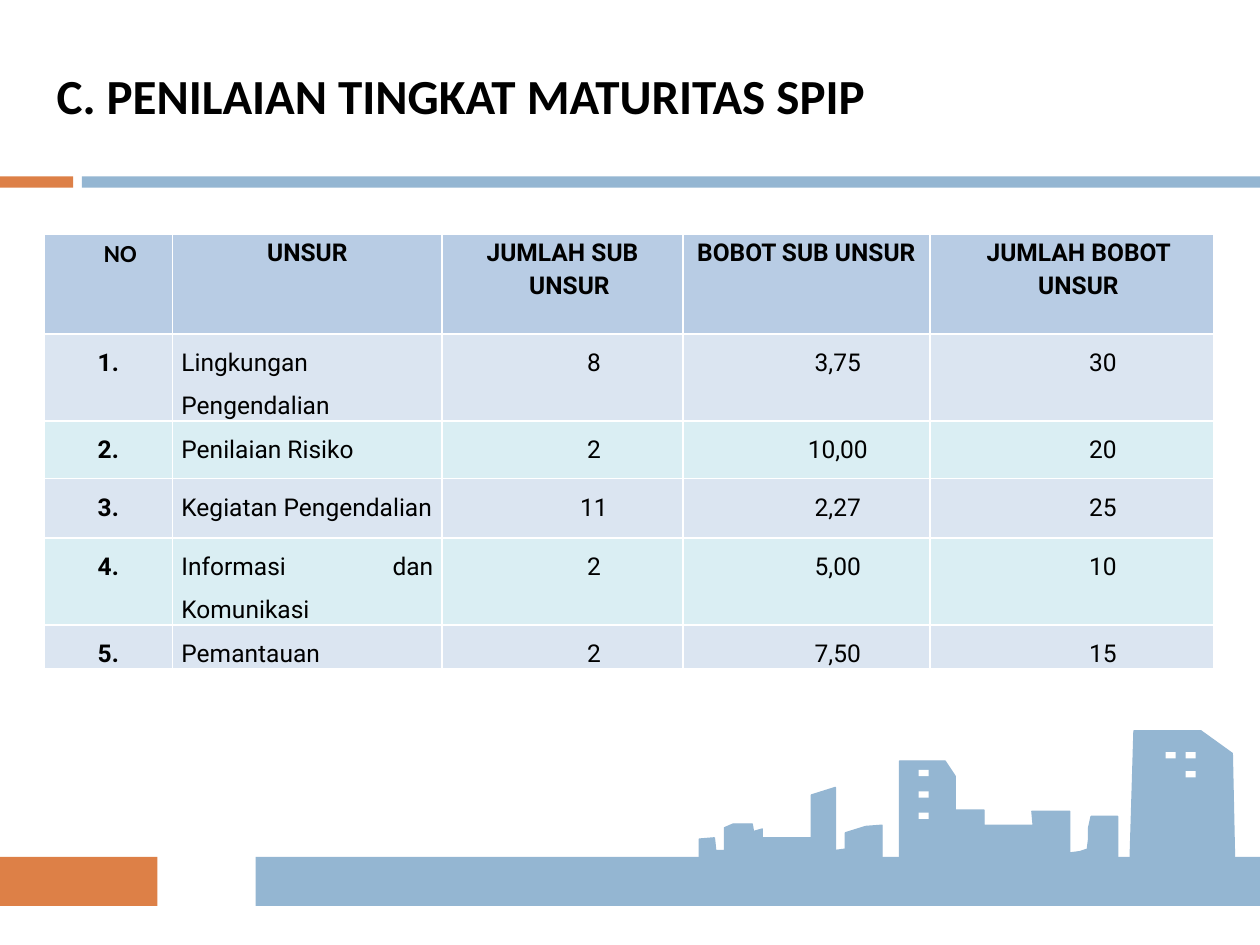
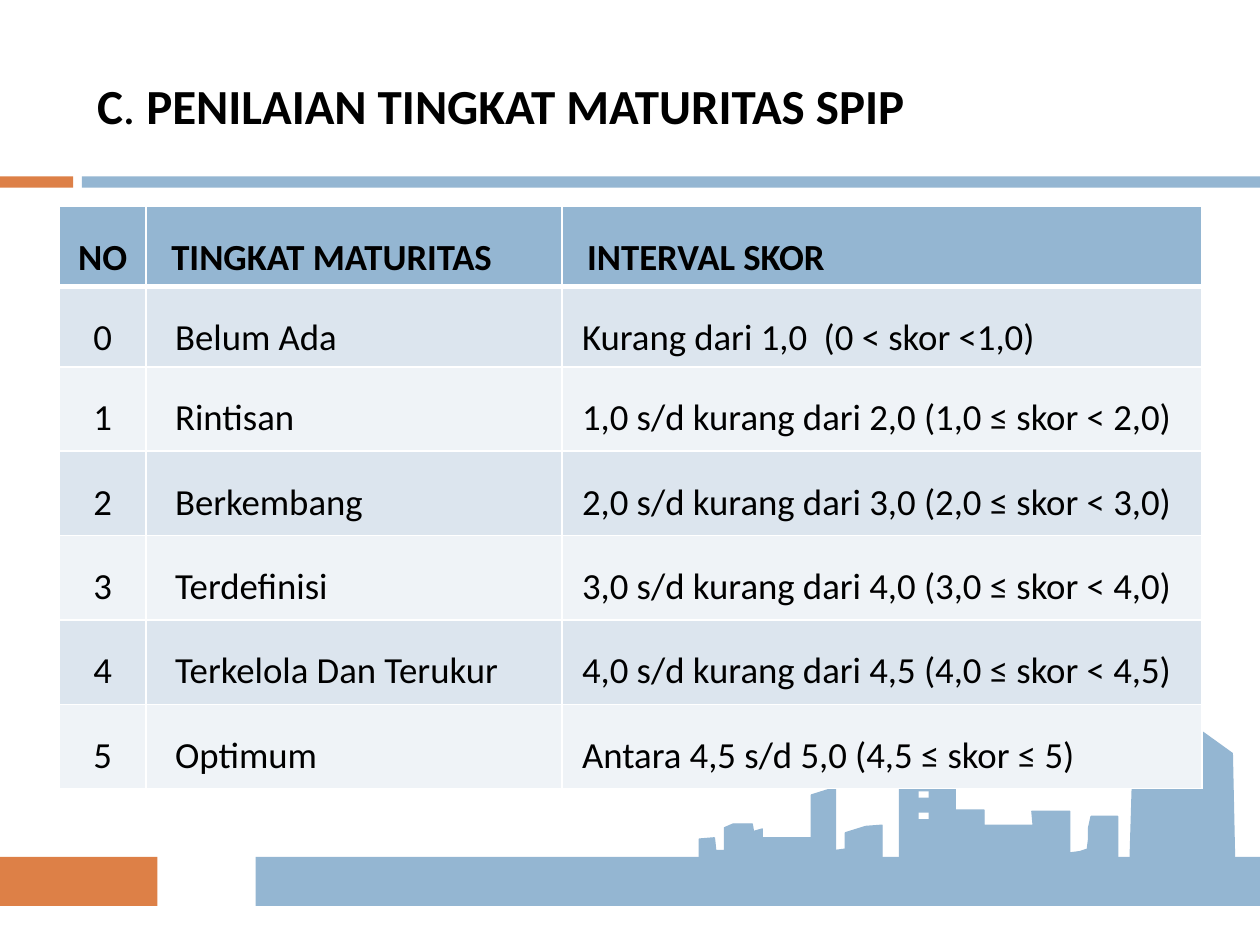
from dataclasses import dataclass

import lxml.etree
import pptx
import pptx.dml.color
import pptx.enum.shapes
import pptx.enum.text
import pptx.oxml.ns
import pptx.util

RGB = pptx.dml.color.RGBColor
ALIGN = pptx.enum.text.PP_ALIGN
RECT = pptx.enum.shapes.MSO_SHAPE.RECTANGLE
qn = pptx.oxml.ns.qn

PX_PER_INCH = 100
EMU_PER_PX = 914400 // PX_PER_INCH

BLACK = RGB(0x00, 0x00, 0x00)
WHITE = RGB(0xFF, 0xFF, 0xFF)
ORANGE = RGB(0xDD, 0x80, 0x47)
BLUE = RGB(0x94, 0xB6, 0xD2)
HEADER_BLUE = RGB(0xB8, 0xCC, 0xE4)
BAND_BLUE = RGB(0xDB, 0xE5, 0xF1)
BAND_AQUA = RGB(0xDA, 0xEE, 0xF3)
BAND_GREY = RGB(0xDC, 0xE5, 0xEE)
BAND_PALE = RGB(0xEF, 0xF3, 0xF7)


@dataclass(frozen=True)
class Box:
    left: int
    top: int
    width: int
    height: int


@dataclass(frozen=True)
class Bar:
    box: Box
    color: RGB


@dataclass(frozen=True)
class CellStyle:
    align: ALIGN = ALIGN.CENTER
    margin: int = 0
    indent: int = 0
    font: str = "Calibri"
    bold: bool = False


@dataclass(frozen=True)
class TableSpec:
    left: int
    top: int
    cols: list[int]
    heights: list[int]
    rows: list[list[str]]
    header_styles: list[CellStyle]
    body_styles: list[CellStyle]
    header_fill: RGB
    bands: tuple[RGB, RGB]
    size: int
    header_spacing: float = 1.5
    space_after: int = 0
    header_rule: int = 1
    inset: Box = Box(10, 5, 10, 5)


BARS = [
    Bar(Box(0, 140, 58, 9), ORANGE),
    Bar(Box(65, 140, 935, 9), BLUE),
    Bar(Box(203, 680, 797, 39), BLUE),
    Bar(Box(0, 680, 125, 39), ORANGE),
]
WINDOWS = [
    *(Bar(Box(729, top, 8, 5), WHITE) for top in (611, 628, 645)),
    *(Bar(Box(left, 597, 8, 5), WHITE) for left in (925, 941)),
    Bar(Box(941, 612, 8, 5), WHITE),
    Bar(Box(795, 631, 8, 8), WHITE),
]
SKYLINE = [
    (555, 685), (555, 666), (567, 665), (568, 675), (575, 675), (575, 657),
    (582, 654), (597, 654), (598, 660), (605, 658), (605, 665), (644, 665),
    (644, 631), (663, 625), (663, 675), (671, 674), (671, 661), (687, 656),
    (700, 655), (700, 682), (714, 683), (714, 604), (750, 604), (758, 616),
    (758, 643), (781, 643), (781, 655), (820, 655), (819, 644), (849, 644),
    (849, 677), (857, 676), (863, 674), (864, 666), (864, 657), (866, 648),
    (887, 648), (887, 681), (897, 681), (900, 580), (953, 580), (978, 598),
    (980, 692), (555, 694),
]

ROBOTO = CellStyle(font="Roboto")
ROBOTO_BOLD = CellStyle(font="Roboto", bold=True)
HANGING = CellStyle(margin=11, indent=-11, font="Roboto", bold=True)
NUMBER = CellStyle(margin=50, font="Roboto")
HEADING = CellStyle(ALIGN.LEFT, margin=10, bold=True)

WEIGHTS = TableSpec(
    left=35, top=186,
    cols=[102, 214, 191, 196, 225],
    heights=[79, 68, 46, 47, 68, 34],
    rows=[
        ["NO", "UNSUR", "JUMLAH SUB UNSUR", "BOBOT SUB UNSUR", "JUMLAH BOBOT UNSUR"],
        ["1.", "Lingkungan Pengendalian", "8", "3,75", "30"],
        ["2.", "Penilaian Risiko", "2", "10,00", "20"],
        ["3.", "Kegiatan Pengendalian", "11", "2,27", "25"],
        ["4.", "Informasi dan Komunikasi", "2", "5,00", "10"],
        ["5.", "Pemantauan", "2", "7,50", "15"],
    ],
    header_styles=[
        CellStyle(margin=50, indent=-31, bold=True), HANGING, HANGING, ROBOTO_BOLD,
        CellStyle(margin=11, font="Roboto", bold=True),
    ],
    body_styles=[
        ROBOTO_BOLD, CellStyle(ALIGN.JUSTIFY, font="Roboto"), NUMBER, NUMBER, NUMBER,
    ],
    header_fill=HEADER_BLUE, bands=(BAND_BLUE, BAND_AQUA),
    size=14, header_spacing=1.15, inset=Box(7, 0, 7, 0),
)
LEVELS = TableSpec(
    left=47, top=164,
    cols=[69, 330, 508],
    heights=[55, 62] + [67] * 5,
    rows=[
        ["NO", "TINGKAT MATURITAS", "INTERVAL SKOR"],
        ["0", "Belum Ada", "Kurang dari 1,0  (0 < skor <1,0)"],
        ["1", "Rintisan", "1,0 s/d kurang dari 2,0 (1,0 ≤ skor < 2,0)"],
        ["2", "Berkembang", "2,0 s/d kurang dari 3,0 (2,0 ≤ skor < 3,0)"],
        ["3", "Terdefinisi", "3,0 s/d kurang dari 4,0 (3,0 ≤ skor < 4,0)"],
        ["4", "Terkelola Dan Terukur", "4,0 s/d kurang dari 4,5 (4,0 ≤ skor < 4,5)"],
        ["5", "Optimum", "Antara 4,5 s/d 5,0 (4,5 ≤ skor ≤ 5)"],
    ],
    header_styles=[CellStyle(bold=True), HEADING, HEADING],
    body_styles=[
        CellStyle(), CellStyle(ALIGN.LEFT, margin=13), CellStyle(ALIGN.JUSTIFY, margin=6),
    ],
    header_fill=BLUE, bands=(BAND_GREY, BAND_PALE),
    size=21, space_after=12, header_rule=3,
)


def px(value: int) -> pptx.util.Emu:
    return pptx.util.Emu(value * EMU_PER_PX)


def place(box: Box) -> tuple:
    return px(box.left), px(box.top), px(box.width), px(box.height)


def set_font(font, name: str, size: int) -> None:
    font.name = name
    font.size = pptx.util.Pt(size)
    font.color.rgb = BLACK


def add_bar(s, bar: Bar) -> None:
    sp = s.shapes.add_shape(RECT, *place(bar.box))
    sp.shadow.inherit = False
    sp.fill.solid()
    sp.fill.fore_color.rgb = bar.color
    sp.line.fill.background()


def add_skyline(s) -> None:
    builder = s.shapes.build_freeform(*SKYLINE[0], scale=EMU_PER_PX)
    builder.add_line_segments(SKYLINE[1:], close=True)
    sp = builder.convert_to_shape()
    sp.shadow.inherit = False
    sp.fill.solid()
    sp.fill.fore_color.rgb = BLUE
    sp.line.color.rgb = BLUE
    sp.line.width = pptx.util.Pt(0.79)


def add_title(s, box: Box, runs: list[tuple[str, bool]]) -> None:
    title = s.shapes.title
    title.left, title.top, title.width, title.height = place(box)
    tf = title.text_frame
    tf.auto_size = pptx.enum.text.MSO_AUTO_SIZE.NONE
    tf.vertical_anchor = pptx.enum.text.MSO_ANCHOR.MIDDLE
    p = tf.paragraphs[0]
    p.alignment = ALIGN.LEFT
    set_font(p.font, "Calibri", 28)
    for text, bold in runs:
        r = p.add_run()
        r.text = text
        r.font.bold = bold


def add_slide(prs, box: Box, runs: list[tuple[str, bool]]):
    s = prs.slides.add_slide(prs.slide_layouts[5])
    for bar in BARS:
        add_bar(s, bar)
    add_skyline(s)
    for window in WINDOWS:
        add_bar(s, window)
    add_title(s, box, runs)
    return s


def set_borders(cell, top: int, bottom: int) -> None:
    tc_pr = cell._tc.get_or_add_tcPr()
    for side, width in (("L", 1), ("R", 1), ("T", top), ("B", bottom)):
        ln = lxml.etree.SubElement(tc_pr, qn(f"a:ln{side}"), w=str(pptx.util.Pt(width)))
        fill = lxml.etree.SubElement(ln, qn("a:solidFill"))
        lxml.etree.SubElement(fill, qn("a:srgbClr"), val=str(WHITE))


def fill_cell(cell, text: str, spec: TableSpec, style: CellStyle, row: int) -> None:
    set_borders(
        cell,
        top=spec.header_rule if row == 1 else 1,
        bottom=spec.header_rule if row == 0 else 1,
    )
    cell.fill.solid()
    cell.fill.fore_color.rgb = spec.bands[(row - 1) % 2] if row else spec.header_fill
    cell.margin_left, cell.margin_top, cell.margin_right, cell.margin_bottom = place(spec.inset)
    cell.text = text
    p = cell.text_frame.paragraphs[0]
    p.alignment = style.align
    p.line_spacing = 1.5 if row else spec.header_spacing
    p.space_after = pptx.util.Pt(spec.space_after)
    p_pr = p._p.get_or_add_pPr()
    p_pr.set("marL", str(px(style.margin)))
    p_pr.set("indent", str(px(style.indent)))
    set_font(p.font, style.font, spec.size)
    p.font.bold = style.bold


def add_table(s, spec: TableSpec) -> None:
    box = Box(spec.left, spec.top, sum(spec.cols), sum(spec.heights))
    table = s.shapes.add_table(len(spec.rows), len(spec.cols), *place(box)).table
    table.first_row = False
    table.horz_banding = False
    for column, width in zip(table.columns, spec.cols):
        column.width = px(width)
    for i, (texts, height) in enumerate(zip(spec.rows, spec.heights)):
        table.rows[i].height = px(height)
        styles = spec.body_styles if i else spec.header_styles
        for j, (text, style) in enumerate(zip(texts, styles)):
            fill_cell(table.cell(i, j), text, spec, style, i)


def main() -> None:
    prs = pptx.Presentation()
    prs.slide_width, prs.slide_height = px(1000), px(750)

    s = add_slide(prs, Box(35, 21, 965, 108), [("C. PENILAIAN TINGKAT MATURITAS SPIP", True)])
    add_table(s, WEIGHTS)

    s = add_slide(
        prs, Box(67, 29, 831, 108),
        [("C", True), (". ", False), ("PENILAIAN TINGKAT MATURITAS SPIP", True)],
    )
    add_table(s, LEVELS)

    prs.save("out.pptx")


if __name__ == "__main__":
    main()
